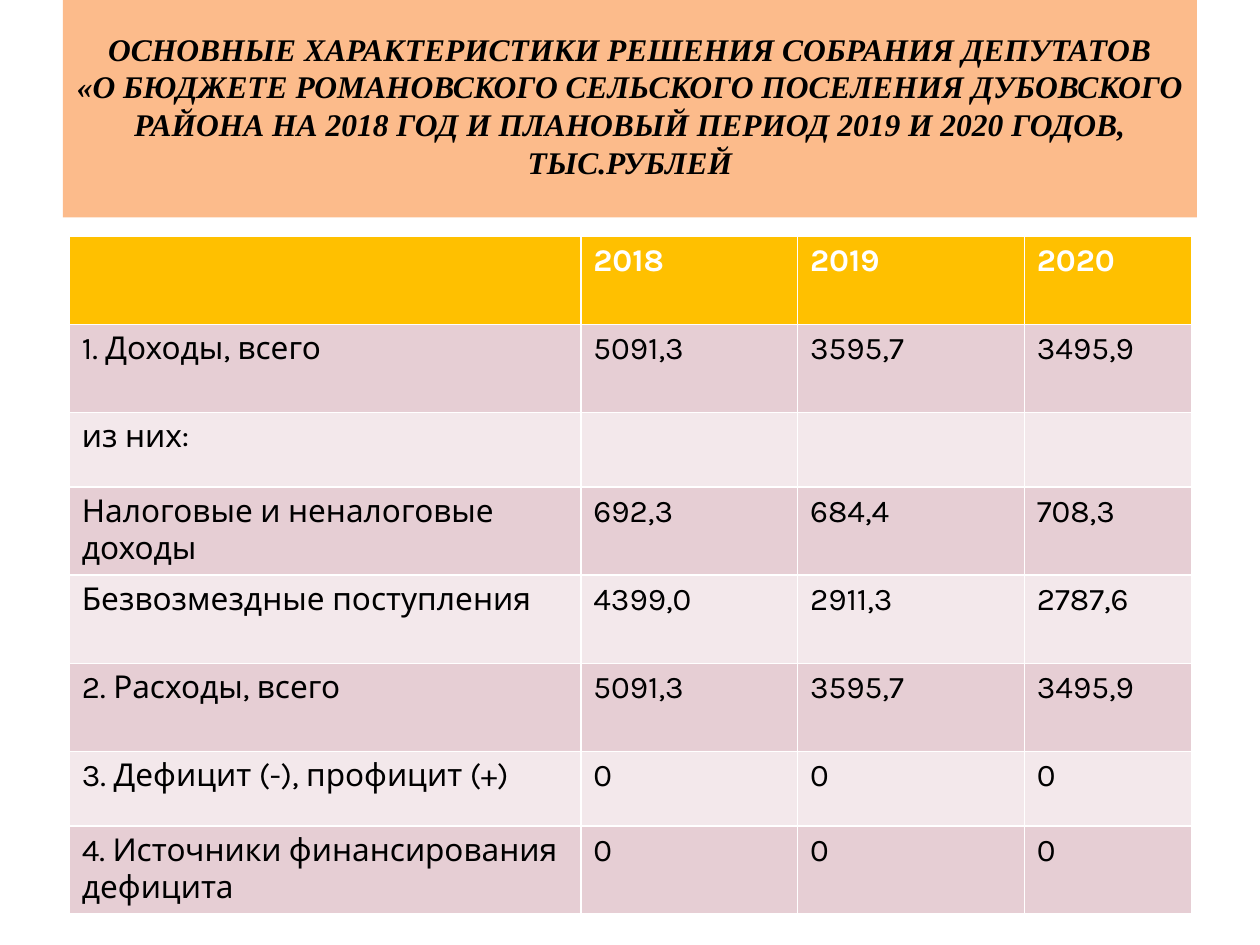
"""Builds a slide with the budget characteristics of a rural settlement."""
from dataclasses import dataclass

from pptx import Presentation
from pptx.dml.color import RGBColor as RGB
from pptx.enum.shapes import MSO_SHAPE as Shape
from pptx.enum.text import MSO_ANCHOR as Anchor, PP_ALIGN as Align
from pptx.util import Inches, Pt


@dataclass(frozen=True)
class Theme:
    banner: str = "FCBB8B"
    header: str = "FFC000"
    bands: tuple[str, str] = ("E6CED4", "F3E8EB")
    dark: str = "000000"
    light: str = "FFFFFF"
    title_font: str = "Times New Roman"
    body_font: str = "Karla"
    size: int = 18


@dataclass(frozen=True)
class Box:
    left: float
    top: float
    width: float
    height: float

    def emu(self) -> tuple[int, int, int, int]:
        return (Inches(self.left * WIDTH), Inches(self.top * HEIGHT),
                Inches(self.width * WIDTH), Inches(self.height * HEIGHT))


@dataclass(frozen=True)
class Row:
    label: str
    values: tuple[str, ...] = ("", "", "")
    height: float = 0.7


THEME = Theme()
WIDTH, HEIGHT = 10, 7.5
BANNER = Box(0.05, 0, 0.9, 0.23)
GRID = Box(0.055, 0.25, 0.89, 0.72)
COLUMNS = (4.06, 1.72, 1.8, 1.33)
TITLE = (
    "ОСНОВНЫЕ ХАРАКТЕРИСТИКИ РЕШЕНИЯ СОБРАНИЯ ДЕПУТАТОВ",
    "«О БЮДЖЕТЕ РОМАНОВСКОГО СЕЛЬСКОГО ПОСЕЛЕНИЯ ДУБОВСКОГО РАЙОНА "
    "НА 2018 ГОД И ПЛАНОВЫЙ ПЕРИОД 2019 И 2020 ГОДОВ, ТЫС.РУБЛЕЙ",
)
TOTALS = ("5091,3", "3595,7", "3495,9")
ZEROS = ("0", "0", "0")
ROWS = (
    Row("", ("2018", "2019", "2020")),
    Row("1. Доходы, всего", TOTALS),
    Row("из них:", height=0.59),
    Row("Налоговые и неналоговые доходы", ("692,3", "684,4", "708,3")),
    Row("Безвозмездные поступления", ("4399,0", "2911,3", "2787,6")),
    Row("2. Расходы, всего", TOTALS),
    Row("3. Дефицит (-), профицит (+)", ZEROS, 0.59),
    Row("4. Источники финансирования дефицита", ZEROS),
)


def add_run(p, text: str, font: str, color: str, bold: bool, italic: bool = False) -> None:
    """Append one formatted run to a paragraph."""
    r = p.add_run()
    r.text = text
    r.font.name, r.font.size = font, Pt(THEME.size)
    r.font.bold, r.font.italic = bold, italic
    r.font.color.rgb = RGB.from_string(color)


def add_banner(slide, box: Box, lines: tuple[str, ...]) -> None:
    """Draw the filled title banner with bottom-anchored text."""
    sp = slide.shapes.add_shape(Shape.RECTANGLE, *box.emu())
    sp.shadow.inherit = False
    sp.fill.solid()
    sp.fill.fore_color.rgb = RGB.from_string(THEME.banner)
    sp.line.fill.background()
    tf = sp.text_frame
    tf.word_wrap, tf.vertical_anchor = True, Anchor.BOTTOM
    tf.margin_left = tf.margin_right = Inches(0.05)
    tf.margin_top, tf.margin_bottom = 0, Inches(0.29)
    p = tf.paragraphs[0]
    p.alignment = Align.CENTER
    for i, line in enumerate(lines):
        if i:
            p.add_line_break()
        add_run(p, line, THEME.title_font, THEME.dark, True, True)


def add_budget_table(slide, box: Box, rows: tuple[Row, ...]) -> None:
    """Draw the budget table with a header row and alternating bands."""
    table = slide.shapes.add_table(len(rows), len(COLUMNS), *box.emu()).table
    for column, width in zip(table.columns, COLUMNS):
        column.width = Inches(width)
    for i, row in enumerate(rows):
        table.rows[i].height = Inches(row.height)
        header = i == 0
        fill = THEME.header if header else THEME.bands[(i - 1) % 2]
        color = THEME.light if header else THEME.dark
        for j, text in enumerate((row.label, *row.values)):
            cell = table.cell(i, j)
            cell.fill.solid()
            cell.fill.fore_color.rgb = RGB.from_string(fill)
            if text:
                add_run(cell.text_frame.paragraphs[0], text, THEME.body_font, color, header)


def main() -> None:
    """Build and save the presentation."""
    prs = Presentation()
    prs.slide_width, prs.slide_height = Inches(WIDTH), Inches(HEIGHT)
    slide = prs.slides.add_slide(prs.slide_layouts[6])
    add_banner(slide, BANNER, TITLE)
    add_budget_table(slide, GRID, ROWS)
    prs.save("out.pptx")


if __name__ == "__main__":
    main()
